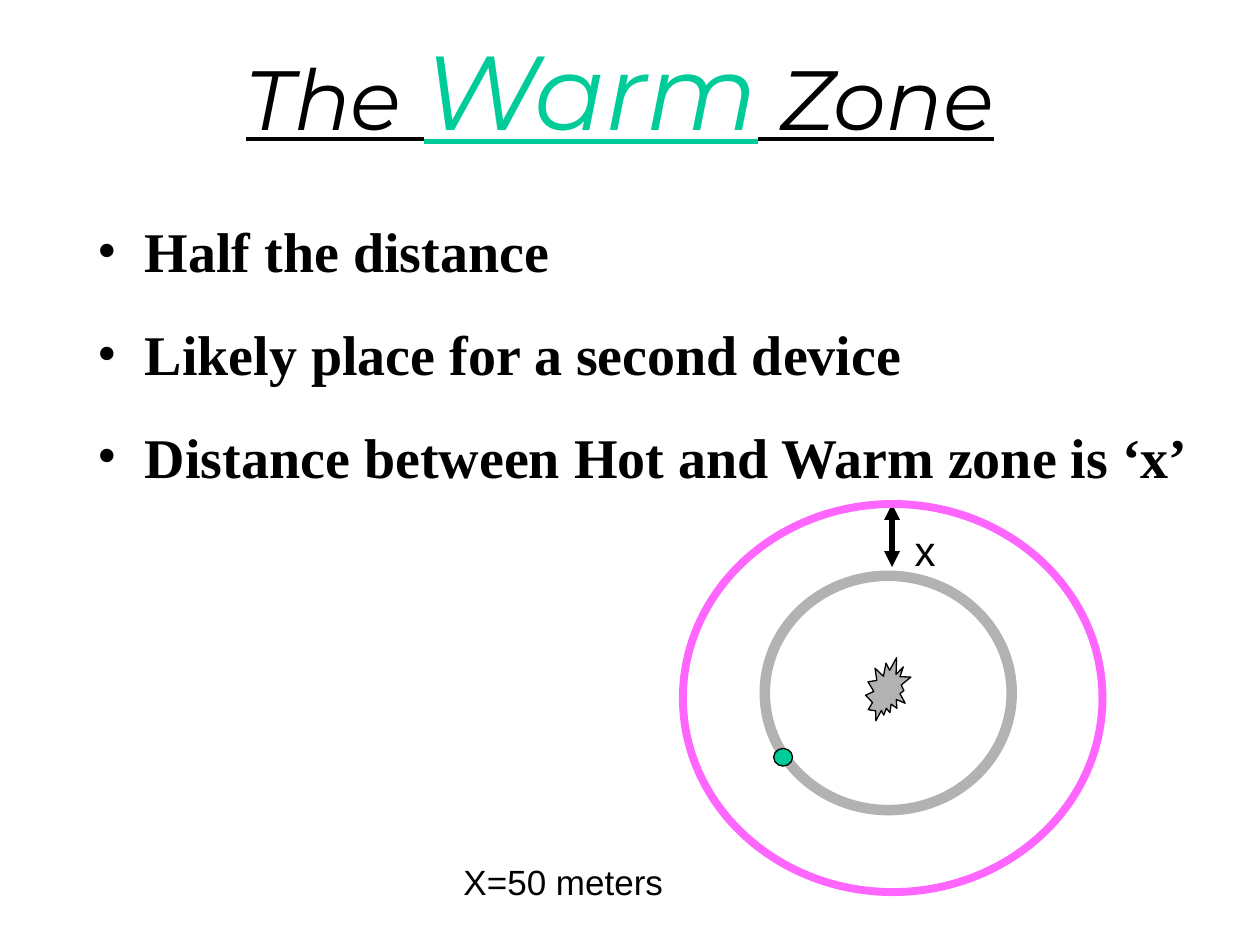
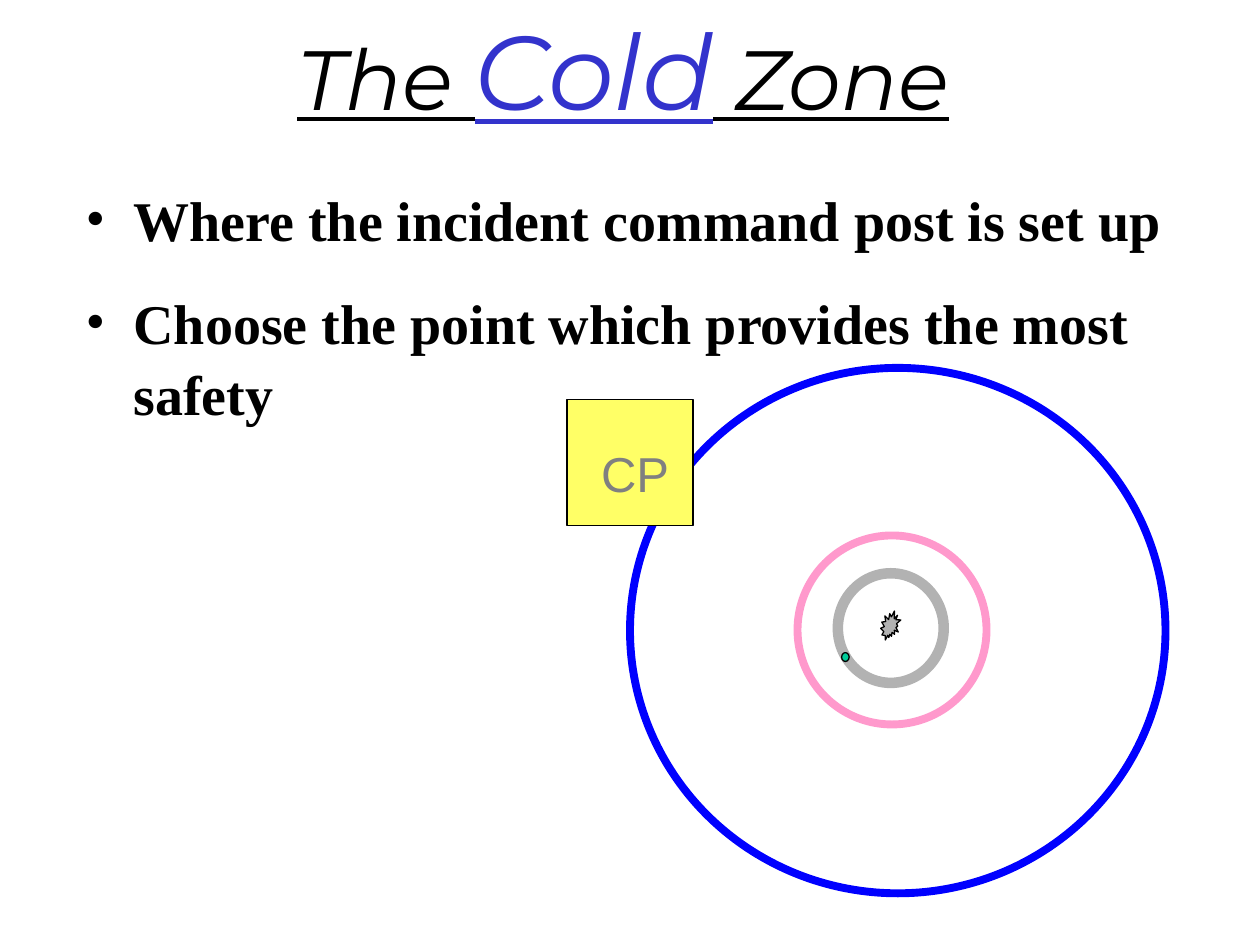
from dataclasses import dataclass
from typing import Optional

from lxml.etree import SubElement
from pptx import Presentation
from pptx.dml.color import RGBColor
from pptx.enum.shapes import MSO_CONNECTOR, MSO_SHAPE
from pptx.enum.text import MSO_ANCHOR, MSO_AUTO_SIZE, PP_ALIGN
from pptx.oxml.ns import qn
from pptx.util import Emu, Pt

EMU_PER_PX = 9144
BLACK = "000000"
WARM = "00CC99"
COLD = "3333CC"
GREY = "B2B2B2"
INDENT = 38


@dataclass(frozen=True)
class Box:
    left: int
    top: int
    width: int
    height: int


@dataclass(frozen=True)
class Figure:
    preset: MSO_SHAPE
    box: Box
    line: str = BLACK
    weight: float = 0.75
    fill: Optional[str] = None


@dataclass(frozen=True)
class Label:
    text: str
    box: Box
    size: int
    color: str = BLACK
    align: PP_ALIGN = PP_ALIGN.LEFT


@dataclass(frozen=True)
class Arrow:
    x: int
    top: int
    bottom: int


@dataclass(frozen=True)
class Zone:
    name: str
    color: str
    title_box: Box
    body_box: Box
    bullets: tuple[str, ...]
    diagram: tuple[Figure | Label | Arrow, ...]


def px(length: int) -> Emu:
    return Emu(length * EMU_PER_PX)


def rgb(color: str) -> RGBColor:
    return RGBColor.from_string(color)


def place(shape, box: Box) -> None:
    shape.left, shape.top = px(box.left), px(box.top)
    shape.width, shape.height = px(box.width), px(box.height)


def write(para, text: str, *, size: int, font: str = "Arial", color: str = BLACK,
          bold: bool = False, italic: bool = False, underline: bool = False) -> None:
    span = para.add_run()
    span.text = text
    span.font.name = font
    span.font.size = Pt(size)
    span.font.bold = bold
    span.font.italic = italic
    span.font.underline = underline
    span.font.color.rgb = rgb(color)


def draw_title(page, zone: Zone) -> None:
    title = page.shapes.title
    place(title, zone.title_box)
    frame = title.text_frame
    frame.auto_size = MSO_AUTO_SIZE.NONE
    frame.vertical_anchor = MSO_ANCHOR.MIDDLE
    para = frame.paragraphs[0]
    para.alignment = PP_ALIGN.CENTER
    for text, size, color in (("The ", 48, BLACK), (zone.name, 60, zone.color),
                              (" Zone", 48, BLACK)):
        write(para, text, size=size, color=color, font="Montserrat",
              italic=True, underline=True)


def add_bullet(para) -> None:
    properties = para._p.get_or_add_pPr()
    properties.set("marL", str(px(INDENT)))
    properties.set("indent", str(-px(INDENT)))
    SubElement(properties, qn("a:buFont"), typeface="Times New Roman")
    SubElement(properties, qn("a:buChar"), char="•")


def draw_bullets(page, zone: Zone) -> None:
    body = page.placeholders[1]
    place(body, zone.body_box)
    frame = body.text_frame
    frame.auto_size = MSO_AUTO_SIZE.NONE
    frame.margin_top = px(11)
    for index, text in enumerate(zone.bullets):
        para = frame.add_paragraph() if index else frame.paragraphs[0]
        add_bullet(para)
        para.line_spacing = 1.06
        para.space_before = Pt(18 if index else 0)
        write(para, text, size=32, font="Times New Roman", bold=True)


def draw_figure(page, figure: Figure) -> None:
    box = figure.box
    shape = page.shapes.add_shape(figure.preset, px(box.left), px(box.top),
                                  px(box.width), px(box.height))
    shape.shadow.inherit = False
    shape.line.color.rgb = rgb(figure.line)
    shape.line.width = Pt(figure.weight)
    if figure.fill:
        shape.fill.solid()
        shape.fill.fore_color.rgb = rgb(figure.fill)
    else:
        shape.fill.background()


def draw_label(page, label: Label) -> None:
    box = label.box
    shape = page.shapes.add_textbox(px(box.left), px(box.top), px(box.width), px(box.height))
    shape.text_frame.word_wrap = True
    para = shape.text_frame.paragraphs[0]
    para.alignment = label.align
    write(para, label.text, size=label.size, color=label.color)


def draw_arrow(page, arrow: Arrow) -> None:
    connector = page.shapes.add_connector(MSO_CONNECTOR.STRAIGHT, px(arrow.x), px(arrow.top),
                                          px(arrow.x), px(arrow.bottom))
    connector.line.color.rgb = rgb(BLACK)
    connector.line.width = Pt(3)
    line = connector.line._get_or_add_ln()
    for end in ("a:headEnd", "a:tailEnd"):
        SubElement(line, qn(end), type="triangle")
    SubElement(connector._element.spPr, qn("a:effectLst"))


def ring(box: Box, color: str, weight: float = 4.5) -> Figure:
    return Figure(MSO_SHAPE.OVAL, box, color, weight)


def hot_zone(circle: Box, blast: Box, device: Box) -> tuple[Figure, ...]:
    return (ring(circle, GREY, 6),
            Figure(MSO_SHAPE.EXPLOSION2, blast, fill=GREY),
            Figure(MSO_SHAPE.OVAL, device, fill=WARM))


ZONES = (
    Zone("Warm", WARM, Box(67, 8, 850, 125), Box(67, 158, 900, 450),
         ("Half the distance",
          "Likely place for a second device",
          "Distance between Hot and Warm zone is ‘x’"),
         (Label("X=50 meters", Box(358, 678, 192, 43), 20),
          *hot_zone(Box(607, 457, 196, 186), Box(687, 522, 36, 50), Box(614, 594, 15, 14)),
          Arrow(708, 400, 450),
          Label("x", Box(716, 411, 29, 50), 24),
          ring(Box(542, 400, 333, 308), "FF66FF"))),
    Zone("Cold", COLD, Box(25, -8, 939, 125), Box(58, 133, 883, 450),
         ("Where the incident command post is set up",
          "Choose the point which provides the most safety"),
         (*hot_zone(Box(665, 455, 84, 87), Box(699, 485, 16, 23), Box(668, 518, 6, 7)),
          ring(Box(633, 425, 150, 150), "FF99CC"),
          ring(Box(500, 292, 425, 417), "0000FF"),
          Figure(MSO_SHAPE.RECTANGLE, Box(450, 317, 100, 100), fill="FFFF66"),
          Label("CP", Box(450, 347, 108, 57), 28, "808080", PP_ALIGN.CENTER))),
)

DRAWERS = {Figure: draw_figure, Label: draw_label, Arrow: draw_arrow}


def main() -> None:
    deck = Presentation()
    deck.slide_width, deck.slide_height = px(1000), px(750)
    for zone in ZONES:
        page = deck.slides.add_slide(deck.slide_layouts[1])
        draw_title(page, zone)
        draw_bullets(page, zone)
        for item in zone.diagram:
            DRAWERS[type(item)](page, item)
    deck.save("out.pptx")


if __name__ == "__main__":
    main()
